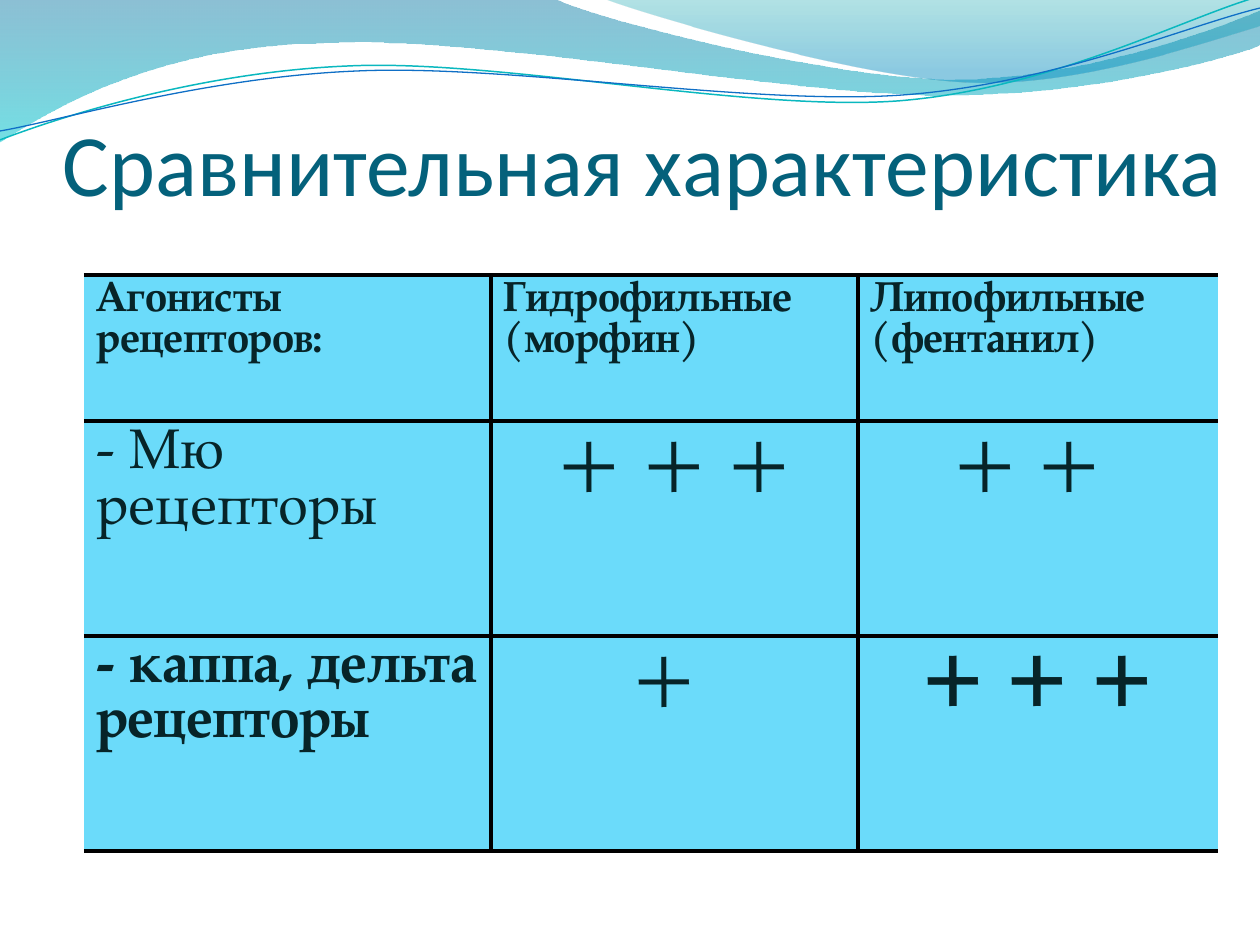
from math import cos, radians, sin

from lxml import etree
from pptx import Presentation
from pptx.dml.color import RGBColor
from pptx.enum.text import MSO_ANCHOR, PP_ALIGN
from pptx.oxml.ns import qn
from pptx.util import Emu, Pt

PX = 914400 // 126
LEFT, CENTER = PP_ALIGN.LEFT, PP_ALIGN.CENTER
BOTTOM = MSO_ANCHOR.BOTTOM
HEAD, BODY = "Calibri", "TeX Gyre Pagella"
HEX = {"title": "04617B", "text": "072428", "cell": "6BDBFA", "rule": "000000",
       "teal": "0AB8BF", "blue": "0F6FC6"}

# Each step is an end point, or two control points and an end point.
SWEEP = [(0, 0), (555, -1), (600, 21, 837, 79, 955, 79), (1075, 79, 1207, 33, 1260, 11),
         (1261, 45), (1239, 55, 1096, 96, 940, 95), (784, 95, 481, 35, 324, 43),
         (163, 45, 58, 105, -1, 142), (0, 0)]
CREST = [(604, -1), (641, 14, 859, 78, 969, 82), (1079, 87, 1211, 40, 1260, 26),
         (1260, 0), (604, -1)]
UPPER = [(0, 140), (60, 117, 199, 72, 349, 66), (498, 59, 747, 112, 898, 101),
         (1050, 89, 1182, 19, 1257, -3)]
LOWER = [(0, 131), (59, 121, 207, 77, 357, 71), (508, 64, 752, 106, 903, 95),
         (1053, 84, 1186, 26, 1260, 8)]
# Stops: position, colour, opacity in percent.
WAVES = [(SWEEP, [(0, "0074A1", 45), (1, "00C6CF", 55)]),
         (CREST, [(0, "00A1A9", 30), (0.8, "008BBF", 45)])]
LINES = [(UPPER, "teal", 0.85), (LOWER, "blue", 0.75)]
TILT, HUB = -2.7, (629, 73)  # turn of the lines in degrees, and its centre

COLS, ROWS = [407, 367, 360], [146, 215, 215]
EDGES = [2, 2, 3, 2]  # widths of the horizontal rules, top to bottom
# Cells: text, size, bold, alignment.
CELLS = [
    [("Агонисты рецепторов:", 24, True, LEFT),
     ("Гидрофильные (морфин)", 24, True, LEFT),
     ("Липофильные (фентанил)", 24, True, LEFT)],
    [("- Мю рецепторы", 32, False, LEFT),
     ("+ + +", 48, False, CENTER), ("+ + ", 48, False, CENTER)],
    [("- каппа, дельта рецепторы", 32, True, LEFT),
     ("+ ", 48, False, CENTER), ("+ + +", 48, True, CENTER)],
]


def px(n):
    return Emu(round(n * PX))


def rgb(name):
    return RGBColor.from_string(HEX.get(name, name))


def write(frame, text, *, size, font, color, bold=False, align=LEFT):
    para = frame.paragraphs[0]
    para.alignment = align
    run = para.add_run()
    run.text = text
    run.font.size, run.font.name, run.font.bold = Pt(size), font, bold
    run.font.color.rgb = rgb(color)


def turn(point, angle):
    """Rotate a point clockwise about the hub."""
    a, x, y = radians(angle), point[0] - HUB[0], point[1] - HUB[1]
    return HUB[0] + x * cos(a) - y * sin(a), HUB[1] + x * sin(a) + y * cos(a)


def outline(slide, box, steps, close, tilt=0):
    """Draw a freeform through the steps, with true Bezier curves."""
    left, top = box[:2]
    pts = [turn(step[i:i + 2], -tilt) for step in steps for i in range(0, len(step), 2)]
    pts = [(px(left + x), px(top + y)) for x, y in pts]
    pen = slide.shapes.build_freeform(*pts[0], scale=1.0)
    pen.add_line_segments(pts[1:], close=close)
    shape = pen.convert_to_shape()
    shape.shadow.inherit = False
    shape.rotation = tilt % 360
    legs = iter(list(shape._element.iter(qn("a:lnTo"))))
    for step in steps[1:]:
        leg = next(legs)
        if len(step) == 6:
            leg.addprevious(curve := etree.Element(qn("a:cubicBezTo")))
            for part in (leg, next(legs), next(legs)):
                curve.append(part[0])
                part.getparent().remove(part)
    return shape


def shade(fill, stops):
    fill.gradient()
    fill.gradient_angle = 270
    for stop, (pos, color, alpha) in zip(fill.gradient_stops, stops):
        stop.position = pos
        stop.color.rgb = rgb(color)
    tags = fill._xPr.iter(qn("a:srgbClr"))
    for tag, (pos, color, alpha) in zip(list(tags), stops):
        etree.SubElement(tag, qn("a:alpha"), val=str(alpha * 1000))


def banner(slide, box):
    for steps, stops in WAVES:
        shape = outline(slide, box, steps, True)
        shade(shape.fill, stops)
        shape.line.fill.background()
    for steps, color, width in LINES:
        shape = outline(slide, box, steps, False, TILT)
        shape.fill.background()
        shape.line.color.rgb = rgb(color)
        shape.line.width = Pt(width)


def title(slide, box):
    frame = slide.shapes.add_textbox(*map(px, box)).text_frame
    frame.word_wrap = True
    frame.vertical_anchor = BOTTOM
    frame.margin_left = frame.margin_right = frame.margin_bottom = 0
    write(frame, "Сравнительная характеристика", size=50, font=HEAD, color="title")


def border(cell, widths):
    """Set the left, right, top and bottom rules in points; 0 hides a rule."""
    props = cell._tc.get_or_add_tcPr()
    for i, (side, width) in enumerate(zip("LRTB", widths)):
        line = etree.Element(qn("a:ln" + side), w=str(Pt(width)))
        if width:
            fill = etree.SubElement(line, qn("a:solidFill"))
            etree.SubElement(fill, qn("a:srgbClr"), val=HEX["rule"])
        else:
            etree.SubElement(line, qn("a:noFill"))
        props.insert(i, line)


def grid(slide, box):
    table = slide.shapes.add_table(len(ROWS), len(COLS), *map(px, box)).table
    table.first_row = table.horz_banding = False
    for col, width in zip(table.columns, COLS):
        col.width = px(width)
    for row, height in zip(table.rows, ROWS):
        row.height = px(height)
    last = len(COLS) - 1
    for r, line in enumerate(CELLS):
        for c, (text, size, bold, align) in enumerate(line):
            cell = table.cell(r, c)
            cell.fill.solid()
            cell.fill.fore_color.rgb = rgb("cell")
            border(cell, (3 if c else 0, 3 if c < last else 0, EDGES[r], EDGES[r + 1]))
            write(cell.text_frame, text, size=size, font=BODY, color="text",
                  bold=bold, align=align)


def main():
    deck = Presentation()
    deck.slide_width, deck.slide_height = px(1260), px(945)
    slide = deck.slides.add_slide(deck.slide_layouts[6])
    banner(slide, (0, 0, 1260, 142))
    title(slide, (63, 45, 1162, 169))
    grid(slide, (84, 275, sum(COLS), sum(ROWS)))
    deck.save("out.pptx")


if __name__ == "__main__":
    main()
